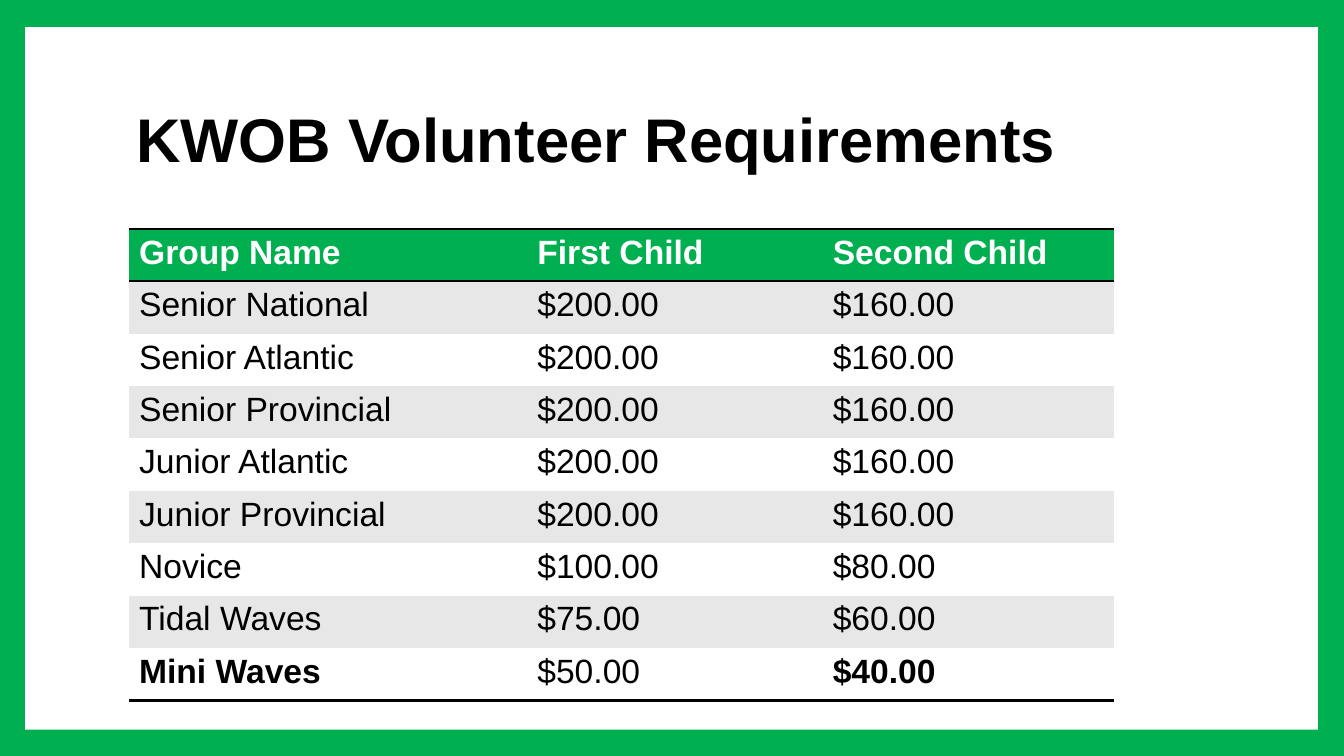
from dataclasses import dataclass

from lxml.etree import SubElement
from pptx import Presentation
from pptx.dml.color import RGBColor
from pptx.enum.shapes import MSO_SHAPE
from pptx.enum.text import MSO_ANCHOR, PP_ALIGN
from pptx.oxml.ns import qn
from pptx.util import Inches, Pt

GREEN, WHITE, BLACK, GREY = "00B050", "FFFFFF", "000000", "E7E7E7"
PLAIN_TABLE_STYLE = "{2D5ABB26-0587-4C30-8999-92F81FD0307C}"
COLUMN_WIDTHS = (3.95, 2.93, 2.89)
ROW_HEIGHT = 0.52


@dataclass
class Row:
    group: str
    first_child: str
    second_child: str
    bold_columns: tuple[int, ...] = ()

    def texts(self) -> tuple[str, str, str]:
        return self.group, self.first_child, self.second_child


ROWS = [
    Row("Group Name", "First Child", "Second Child", (0, 1, 2)),
    Row("Senior National", "$200.00", "$160.00"),
    Row("Senior Atlantic", "$200.00", "$160.00"),
    Row("Senior Provincial", "$200.00", "$160.00"),
    Row("Junior Atlantic", "$200.00", "$160.00"),
    Row("Junior Provincial", "$200.00", "$160.00"),
    Row("Novice", "$100.00", "$80.00"),
    Row("Tidal Waves", "$75.00", "$60.00"),
    Row("Mini Waves", "$50.00", "$40.00", (0, 2)),
]


def color(value: str) -> RGBColor:
    return RGBColor.from_string(value)


def format_text(frame, size: float, ink: str, bold: bool) -> None:
    for para in frame.paragraphs:
        for span in para.runs:
            span.font.name = "Arial"
            span.font.size = Pt(size)
            span.font.bold = bold
            span.font.color.rgb = color(ink)


def add_border(cell, side: str) -> None:
    properties = cell._tc.get_or_add_tcPr()
    line = SubElement(properties, qn(f"a:{side}"), w=str(Pt(2)))
    fill = SubElement(line, qn("a:solidFill"))
    SubElement(fill, qn("a:srgbClr"), val=BLACK)


def add_panel(page) -> None:
    panel = page.shapes.add_shape(
        MSO_SHAPE.RECTANGLE, Inches(0.25), Inches(0.27), Inches(12.82), Inches(6.97)
    )
    panel.shadow.inherit = False
    panel.fill.solid()
    panel.fill.fore_color.rgb = color(WHITE)
    panel.line.fill.background()
    page.shapes._spTree.insert(2, panel._element)


def set_title(page, text: str) -> None:
    title = page.shapes.title
    title.left, title.top = Inches(1.25), Inches(0.67)
    title.width, title.height = Inches(10.8), Inches(1.48)
    frame = title.text_frame
    frame.text = text
    frame.word_wrap = True
    frame.vertical_anchor = MSO_ANCHOR.MIDDLE
    frame.paragraphs[0].alignment = PP_ALIGN.LEFT
    frame.paragraphs[0].line_spacing = 0.9
    format_text(frame, 44, BLACK, True)


def add_requirements(page, rows: list[Row]) -> None:
    table = page.shapes.add_table(
        len(rows), len(COLUMN_WIDTHS), Inches(1.28), Inches(2.27),
        Inches(sum(COLUMN_WIDTHS)), Inches(ROW_HEIGHT * len(rows)),
    ).table
    table._tbl.tblPr.find(qn("a:tableStyleId")).text = PLAIN_TABLE_STYLE
    for column, width in zip(table.columns, COLUMN_WIDTHS):
        column.width = Inches(width)
    for row_index, row in enumerate(rows):
        is_header = row_index == 0
        band = GREEN if is_header else GREY if row_index % 2 else WHITE
        table.rows[row_index].height = Inches(ROW_HEIGHT)
        for column_index, text in enumerate(row.texts()):
            cell = table.cell(row_index, column_index)
            if is_header:
                add_border(cell, "lnT")
            if is_header or row_index == len(rows) - 1:
                add_border(cell, "lnB")
            cell.fill.solid()
            cell.fill.fore_color.rgb = color(band)
            cell.text_frame.text = text
            ink = WHITE if is_header else BLACK
            format_text(cell.text_frame, 24, ink, column_index in row.bold_columns)


def main() -> None:
    """Build the volunteer requirements slide."""
    deck = Presentation()
    deck.slide_width, deck.slide_height = Inches(13.33), Inches(7.5)
    page = deck.slides.add_slide(deck.slide_layouts[5])
    page.background.fill.solid()
    page.background.fill.fore_color.rgb = color(GREEN)
    add_panel(page)
    set_title(page, "KWOB Volunteer Requirements")
    add_requirements(page, ROWS)
    deck.save("out.pptx")


if __name__ == "__main__":
    main()
